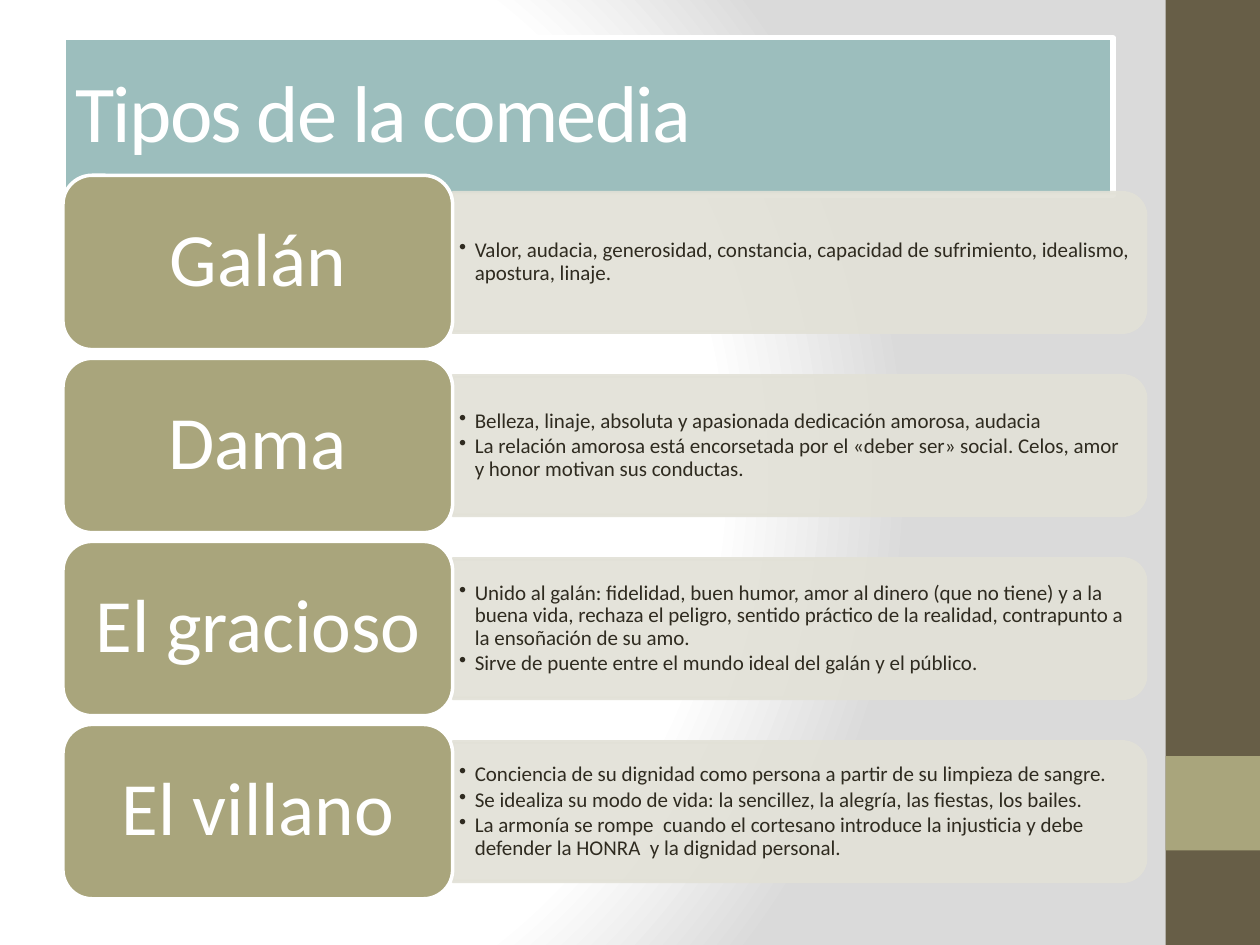
from dataclasses import dataclass

from pptx import Presentation
from pptx.dml.color import RGBColor
from pptx.enum.shapes import MSO_SHAPE as Preset
from pptx.enum.text import MSO_ANCHOR as Anchor, PP_ALIGN as Align
from pptx.oxml import parse_xml
from pptx.oxml.ns import nsdecls, qn
from pptx.util import Pt


@dataclass(frozen=True)
class Theme:
    font: str = "Calibri"
    white: str = "FFFFFF"
    backdrop: str = "DADADA"
    brown: str = "675E47"
    olive: str = "A9A57C"
    teal: str = "9CBEBD"
    panel: str = "E2E1D7"
    ink: str = "2F2B20"
    title_size: float = 46
    label_size: float = 43
    body_size: float = 12


theme = Theme()


def add_block(preset, left, top, width, height, fill, line=None, line_width=2):
    shape = slide.shapes.add_shape(preset, Pt(left), Pt(top), Pt(width), Pt(height))
    shape.shadow.inherit = False
    shape.fill.solid()
    shape.fill.fore_color.rgb = RGBColor.from_string(fill)
    if line:
        shape.line.color.rgb = RGBColor.from_string(line)
        shape.line.width = Pt(line_width)
    else:
        shape.line.fill.background()
    return shape


def style_text(shape, size, color, align, inset_x, inset_y):
    """Apply font, alignment and insets to all text already in the shape."""
    frame = shape.text_frame
    frame.word_wrap = True
    frame.vertical_anchor = Anchor.MIDDLE
    frame.margin_left = frame.margin_right = Pt(inset_x)
    frame.margin_top = frame.margin_bottom = Pt(inset_y)
    for paragraph in frame.paragraphs:
        paragraph.alignment = align
        paragraph.line_spacing = 0.9
        for run in paragraph.runs:
            run.font.name = theme.font
            run.font.size = Pt(size)
            run.font.color.rgb = RGBColor.from_string(color)


presentation = Presentation()
presentation.slide_width, presentation.slide_height = Pt(720), Pt(540)
slide = presentation.slides.add_slide(presentation.slide_layouts[6])

# Radial background
stops = [(0, theme.white), (75, theme.white), (100, theme.backdrop)]
stops_xml = "".join(
    f'<a:gs pos="{position * 1000}"><a:srgbClr val="{color}"/></a:gs>'
    for position, color in stops
)
slide._element.cSld.insert(0, parse_xml(
    f'<p:bg {nsdecls("p", "a")}><p:bgPr><a:gradFill rotWithShape="1">'
    f'<a:gsLst>{stops_xml}</a:gsLst><a:path path="circle">'
    '<a:fillToRect l="20000" t="50000" r="100000" b="50000"/></a:path>'
    '</a:gradFill><a:effectLst/></p:bgPr></p:bg>'
))

# Side band
add_block(Preset.RECTANGLE, 666, 0, 54, 540, theme.brown)
add_block(Preset.RECTANGLE, 666, 432, 54, 54, theme.olive)

# Title
title = add_block(Preset.RECTANGLE, 36, 21.6, 600, 90, theme.teal, theme.white, 3)
title.text_frame.text = "Tipos de la comedia"
style_text(title, theme.title_size, theme.white, Align.LEFT, 7.2, 3.6)
title.text_frame.paragraphs[0].runs[0].font._element.set("spc", "-100")

# Character types
characters = [
    ("Galán", [
        "Valor, audacia, generosidad, constancia, capacidad de sufrimiento, "
        "idealismo, apostura, linaje.",
    ]),
    ("Dama", [
        "Belleza, linaje, absoluta y apasionada dedicación amorosa, audacia",
        "La relación amorosa está encorsetada por el «deber ser» social. "
        "Celos, amor y honor motivan sus conductas.",
    ]),
    ("El gracioso", [
        "Unido al galán: fidelidad, buen humor, amor al dinero (que no tiene) "
        "y a la buena vida, rechaza el peligro, sentido práctico de la realidad, "
        "contrapunto a la ensoñación de su amo.",
        "Sirve de puente entre el mundo ideal del galán y el público.",
    ]),
    ("El villano", [
        "Conciencia de su dignidad como persona a partir de su limpieza de sangre.",
        "Se idealiza su modo de vida: la sencillez, la alegría, las fiestas, "
        "los bailes.",
        "La armonía se rompe  cuando el cortesano introduce la injusticia y debe "
        "defender la HONRA  y la dignidad personal.",
    ]),
]
first_top, row_pitch = 100.2, 104.6
label_left, label_width, label_height = 36, 222.7, 99.6
panel_left, panel_width, panel_height = 258.7, 396, 79.7
text_width, text_height = 392, 72

for row, (name, traits) in enumerate(characters):
    top = first_top + row * row_pitch
    middle = top + label_height / 2

    # The panel stands upright and is turned so its round corners face right
    panel = add_block(
        Preset.ROUND_2_SAME_RECTANGLE,
        panel_left + (panel_width - panel_height) / 2, middle - panel_width / 2,
        panel_height, panel_width, theme.panel, theme.panel,
    )
    panel.rotation = 90
    for color in panel._element.spPr.iter(qn("a:srgbClr")):
        color.append(parse_xml(f'<a:alpha {nsdecls("a")} val="90000"/>'))

    body = slide.shapes.add_textbox(
        Pt(panel_left), Pt(middle - text_height / 2), Pt(text_width), Pt(text_height)
    )
    body.text_frame.text = "\n".join(traits)
    style_text(body, theme.body_size, theme.ink, Align.LEFT, 3.6, 1.8)
    for paragraph in body.text_frame.paragraphs:
        paragraph.space_after = Pt(1.5)
        properties = paragraph._element.get_or_add_pPr()
        properties.set("marL", str(Pt(9)))
        properties.set("indent", str(-Pt(9)))
        properties.append(parse_xml(f'<a:buChar {nsdecls("a")} char="•"/>'))

    label = add_block(
        Preset.ROUNDED_RECTANGLE, label_left, top, label_width, label_height,
        theme.olive, theme.white,
    )
    label.text_frame.text = name
    style_text(label, theme.label_size, theme.white, Align.CENTER, 13, 6.5)
    label.text_frame.paragraphs[0].space_after = Pt(15)

presentation.save("out.pptx")
